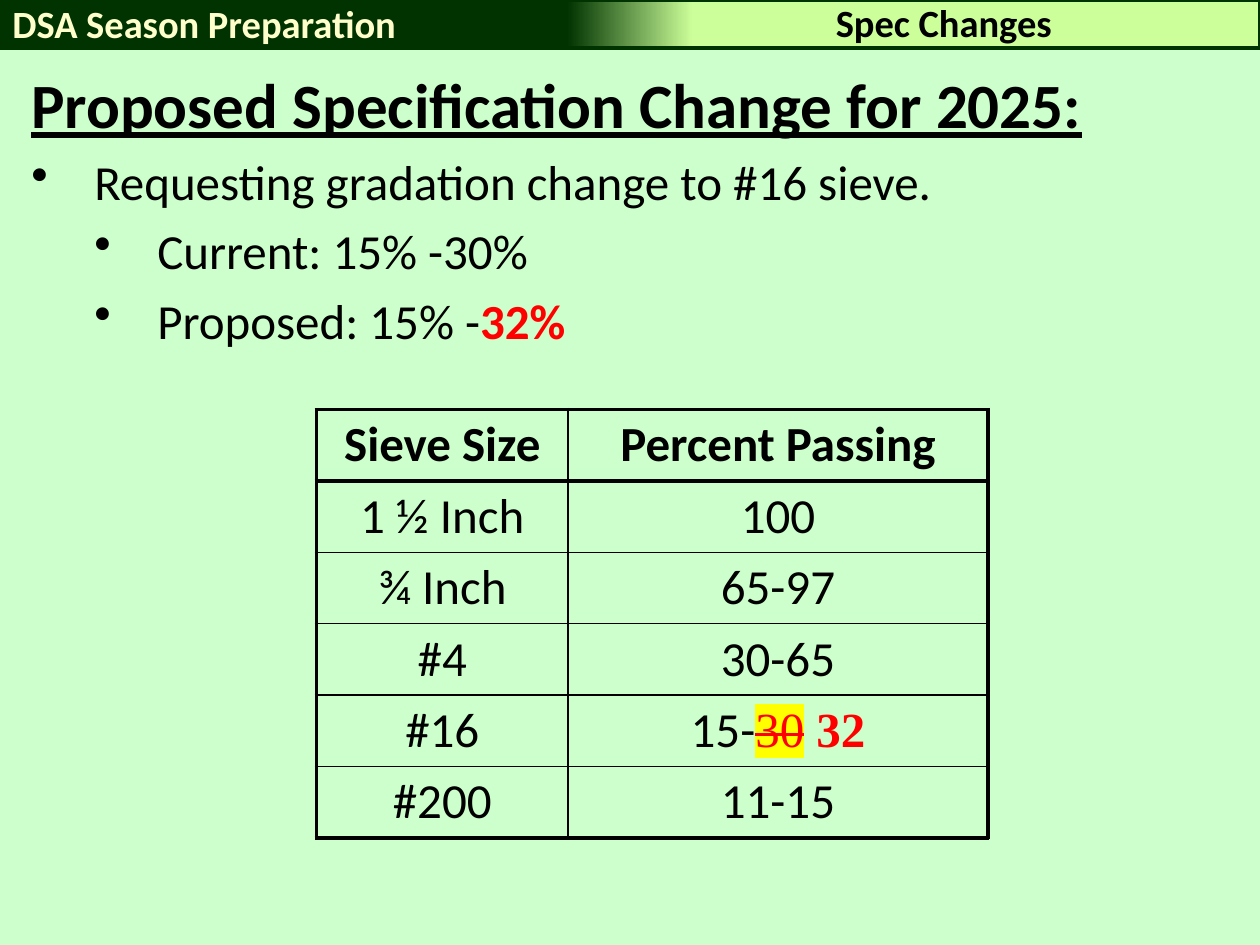
from lxml import etree
from pptx import Presentation
from pptx import util as u
from pptx.dml.color import RGBColor
from pptx.enum import shapes, text
from pptx.oxml.ns import qn

COLORS = {"page": "CCFFCC", "dark": "003300", "lime": "CCFF99", "cream": "FFFFCC",
          "ink": "000000", "change": "FF0000", "marker": "FFFF00"}
W, H = u.Inches(10), u.Inches(7.5)
BODY, OLD = "Calibri", "Times New Roman"


def rgb(name):
    return RGBColor.from_string(COLORS[name])


def style(font, size, color="ink", bold=False, face=BODY):
    font.size, font.bold, font.name = u.Pt(size), bold, face
    font.color.rgb = rgb(color)


prs = Presentation()
prs.slide_width, prs.slide_height = W, H
slide = prs.slides.add_slide(prs.slide_layouts[6])
slide.background.fill.solid()
slide.background.fill.fore_color.rgb = rgb("page")

# Proposal: heading, then bulleted points of (level, text, changed value)
proposal = slide.shapes.add_textbox(u.Inches(0.15), u.Inches(0.47),
                                    u.Inches(9.51), u.Inches(2.5)).text_frame
proposal.word_wrap = True
heading = proposal.paragraphs[0]
heading.text = "Proposed Specification Change for 2025:"
style(heading.font, 36, bold=True)
heading.font.underline = True

points = [(0, "Requesting gradation change to #16 sieve.", ""),
          (1, "Current: 15% -30%", ""),
          (1, "Proposed: 15% -", "32%")]
for level, wording, changed in points:
    point = proposal.add_paragraph()
    point.level, point.space_before = level, u.Pt(6)
    style(point.font, 28)
    point.add_run().text = wording
    if changed:
        new_value = point.add_run()
        new_value.text = changed
        style(new_value.font, 28, "change", bold=True)
    props = point._p.get_or_add_pPr()
    props.set("marL", str(u.Inches(0.5 * (level + 1))))
    props.set("indent", str(-u.Inches(0.5)))
    bullet = etree.Element(qn("a:buChar"), char="•")
    props.find(qn("a:defRPr")).addprevious(bullet)

# Header band with its two labels
band = slide.shapes.add_shape(shapes.MSO_SHAPE.RECTANGLE, 0, 0, W, u.Inches(0.38))
band.shadow.inherit = False
band.fill.gradient()
band.fill.gradient_angle = 0
for stop, position, color in zip(band.fill.gradient_stops, (0.45, 0.55), ("dark", "lime")):
    stop.position, stop.color.rgb = position, rgb(color)
band.line.color.rgb, band.line.width = rgb("dark"), u.Pt(2)

labels = [("DSA Season Preparation", 0, -0.05, "cream", text.PP_ALIGN.LEFT),
          ("Spec Changes", 4.98, -0.06, "ink", text.PP_ALIGN.CENTER)]
for wording, left, top, color, align in labels:
    label = slide.shapes.add_textbox(u.Inches(left), u.Inches(top),
                                     u.Inches(5.02), u.Inches(0.47)).text_frame
    label.word_wrap = True
    label.vertical_anchor = text.MSO_ANCHOR.MIDDLE
    label.paragraphs[0].text = wording
    label.paragraphs[0].alignment = align
    style(label.paragraphs[0].font, 22, color, bold=True)

# Gradation table
gradation = [("Sieve Size", "Percent Passing"), ("1 ½ Inch", "100"), ("¾ Inch", "65-97"),
             ("#4", "30-65"), ("#16", "15-"), ("#200", "11-15")]
last = len(gradation) - 1
sieves = slide.shapes.add_table(len(gradation), 2, u.Inches(2.51), u.Inches(3.25),
                                u.Inches(5.33), u.Inches(3.4)).table
sieves.first_row = sieves.horz_banding = False
for column, width in zip(sieves.columns, (2, 3.33)):
    column.width = u.Inches(width)

for r, row in enumerate(gradation):
    for c, wording in enumerate(row):
        cell = sieves.cell(r, c)
        cell.fill.background()
        cell.vertical_anchor = text.MSO_ANCHOR.MIDDLE
        cell.margin_top = cell.margin_bottom = u.Inches(0.04)
        entry = cell.text_frame.paragraphs[0]
        entry.alignment = text.PP_ALIGN.CENTER
        style(entry.font, 28, bold=r == 0)
        entry.add_run().text = wording
        # Heavy lines run around the table and under its heading row
        heavy = {"lnL": c == 0, "lnR": c == 1, "lnT": r <= 1, "lnB": r in (0, last)}
        for i, (side, is_heavy) in enumerate(heavy.items()):
            border = etree.Element(qn(f"a:{side}"), w=str(u.Pt(2.25 if is_heavy else 1)))
            ink = etree.SubElement(border, qn("a:solidFill"))
            etree.SubElement(ink, qn("a:srgbClr"), val=COLORS["ink"])
            cell._tc.get_or_add_tcPr().insert(i, border)

# Revised limit for the #16 sieve
limit = sieves.cell(4, 1).text_frame.paragraphs[0]
struck, gap, revised = [limit.add_run() for _ in range(3)]
struck.text, gap.text, revised.text = "30", " ", "32"
style(struck.font, 28, "change", face=OLD)
style(gap.font, 28, face=OLD)
style(revised.font, 28, "change", bold=True, face=OLD)
struck_props = struck._r.get_or_add_rPr()
struck_props.set("strike", "sngStrike")
highlight = etree.Element(qn("a:highlight"))
etree.SubElement(highlight, qn("a:srgbClr"), val=COLORS["marker"])
struck_props.find(qn("a:solidFill")).addnext(highlight)

prs.save("out.pptx")
